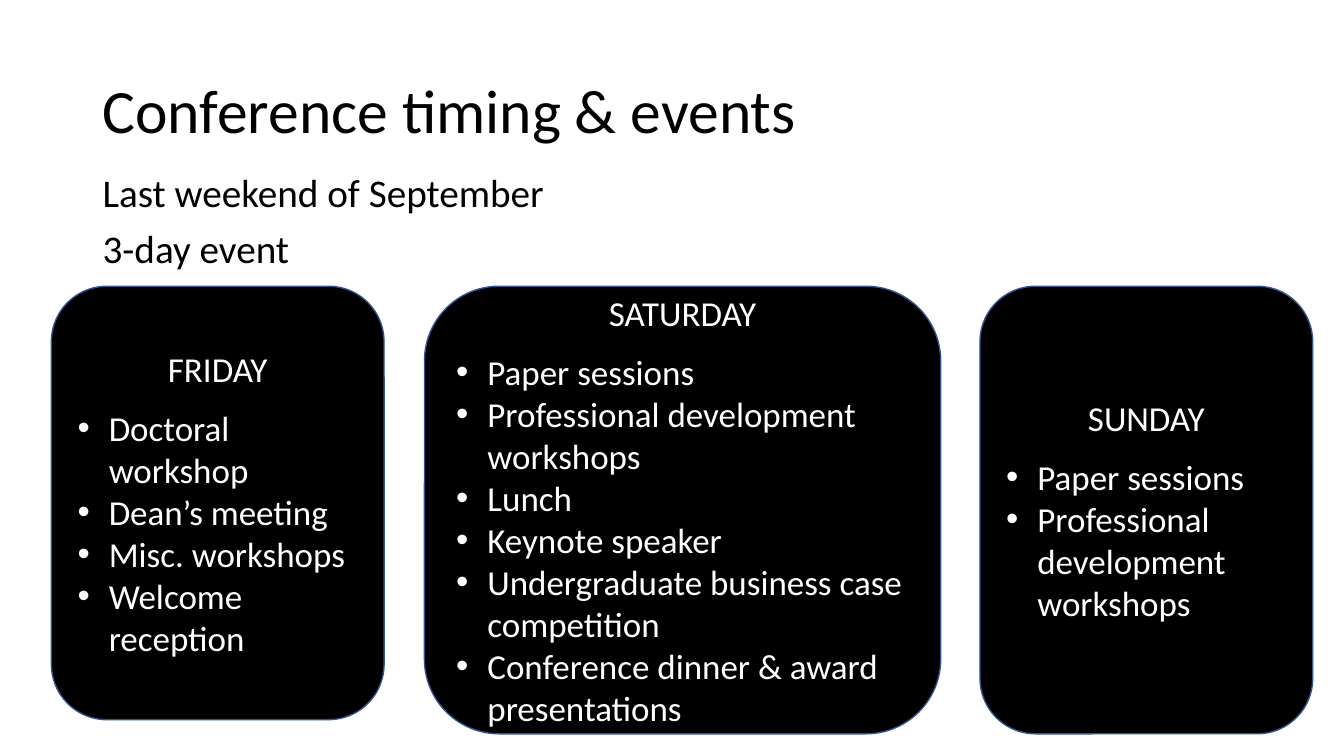
"""Build the conference timing and events slide."""
from dataclasses import dataclass

from lxml import etree
from pptx import Presentation
from pptx import util as u
from pptx.dml.color import RGBColor
from pptx.enum import shapes, text
from pptx.oxml.ns import qn


@dataclass(frozen=True)
class Theme:
    """Colours, font and type sizes of the slide."""
    font: str = "Calibri"
    ink: str = "000000"
    paper: str = "FFFFFF"
    card_fill: str = "000000"
    card_line: str = "325491"
    title_size: int = 44
    body_size: int = 28
    card_size: int = 25


def write(paragraph, content, *, font, size, color, align=text.PP_ALIGN.LEFT,
          line_spacing=1.0, before=0, after=0, bullet_indent=None):
    """Fill a paragraph with formatted text."""
    paragraph.alignment = align
    paragraph.line_spacing = line_spacing
    paragraph.space_before = u.Pt(before)
    paragraph.space_after = u.Pt(after)
    run = paragraph.add_run()
    run.text = content
    run.font.name = font
    run.font.size = u.Pt(size)
    run.font.color.rgb = RGBColor.from_string(color)
    if bullet_indent is not None:
        properties = paragraph._p.get_or_add_pPr()
        properties.set("marL", str(bullet_indent))
        properties.set("indent", str(-bullet_indent))
        etree.SubElement(properties, qn("a:buFont")).set("typeface", "Arial")
        etree.SubElement(properties, qn("a:buChar")).set("char", "•")


class SlideBuilder:
    """Hold the theme and the current slide."""

    def __init__(self, slide, theme):
        """Keep the slide and its theme."""
        self.slide = slide
        self.theme = theme

    def text_block(self, box, lines, size, anchor, before=0):
        """Add a text box with one paragraph per line."""
        shape = self.slide.shapes.add_textbox(*map(u.Inches, box))
        frame = shape.text_frame
        frame.word_wrap = True
        frame.vertical_anchor = anchor
        for index, line in enumerate(lines):
            paragraph = frame.add_paragraph() if index else frame.paragraphs[0]
            write(paragraph, line, font=self.theme.font, size=size,
                  color=self.theme.ink, line_spacing=0.9, before=before)

    def day_card(self, box, day, events):
        """Add a rounded card with a day heading and bulleted events."""
        shape = self.slide.shapes.add_shape(
            shapes.MSO_SHAPE.ROUNDED_RECTANGLE, *map(u.Inches, box))
        shape.shadow.inherit = False
        shape.fill.solid()
        shape.fill.fore_color.rgb = RGBColor.from_string(self.theme.card_fill)
        shape.line.color.rgb = RGBColor.from_string(self.theme.card_line)
        shape.line.width = u.Pt(1)
        frame = shape.text_frame
        frame.word_wrap = True
        frame.vertical_anchor = text.MSO_ANCHOR.MIDDLE
        style = dict(font=self.theme.font, size=self.theme.card_size,
                     color=self.theme.paper)
        write(frame.paragraphs[0], day, align=text.PP_ALIGN.CENTER,
              after=12, **style)
        for event in events:
            write(frame.add_paragraph(), event,
                  bullet_indent=u.Inches(0.31), **style)


def main():
    """Build and save the presentation."""
    presentation = Presentation()
    presentation.slide_width = u.Inches(13.33)
    presentation.slide_height = u.Inches(7.5)
    slide = presentation.slides.add_slide(presentation.slide_layouts[6])
    theme = Theme()
    builder = SlideBuilder(slide, theme)

    builder.text_block((0.92, 0.4, 11.5, 1.45), ["Conference timing & events"],
                       theme.title_size, text.MSO_ANCHOR.MIDDLE)
    builder.text_block((0.92, 1.67, 11.5, 1.17),
                       ["Last weekend of September", "3-day event"],
                       theme.body_size, text.MSO_ANCHOR.TOP, before=10)

    card_top = 2.84
    shared_events = ["Paper sessions", "Professional development workshops"]
    days = [
        (0.51, 3.3, 4.3, "FRIDAY",
         ["Doctoral workshop", "Dean’s meeting", "Misc. workshops",
          "Welcome reception"]),
        (4.21, 5.12, 4.44, "SATURDAY",
         shared_events + ["Lunch", "Keynote speaker",
                          "Undergraduate business case competition",
                          "Conference dinner & award presentations"]),
        (9.72, 3.3, 4.44, "SUNDAY", shared_events),
    ]
    for left, width, height, day, events in days:
        builder.day_card((left, card_top, width, height), day, events)

    presentation.save("out.pptx")


if __name__ == "__main__":
    main()
